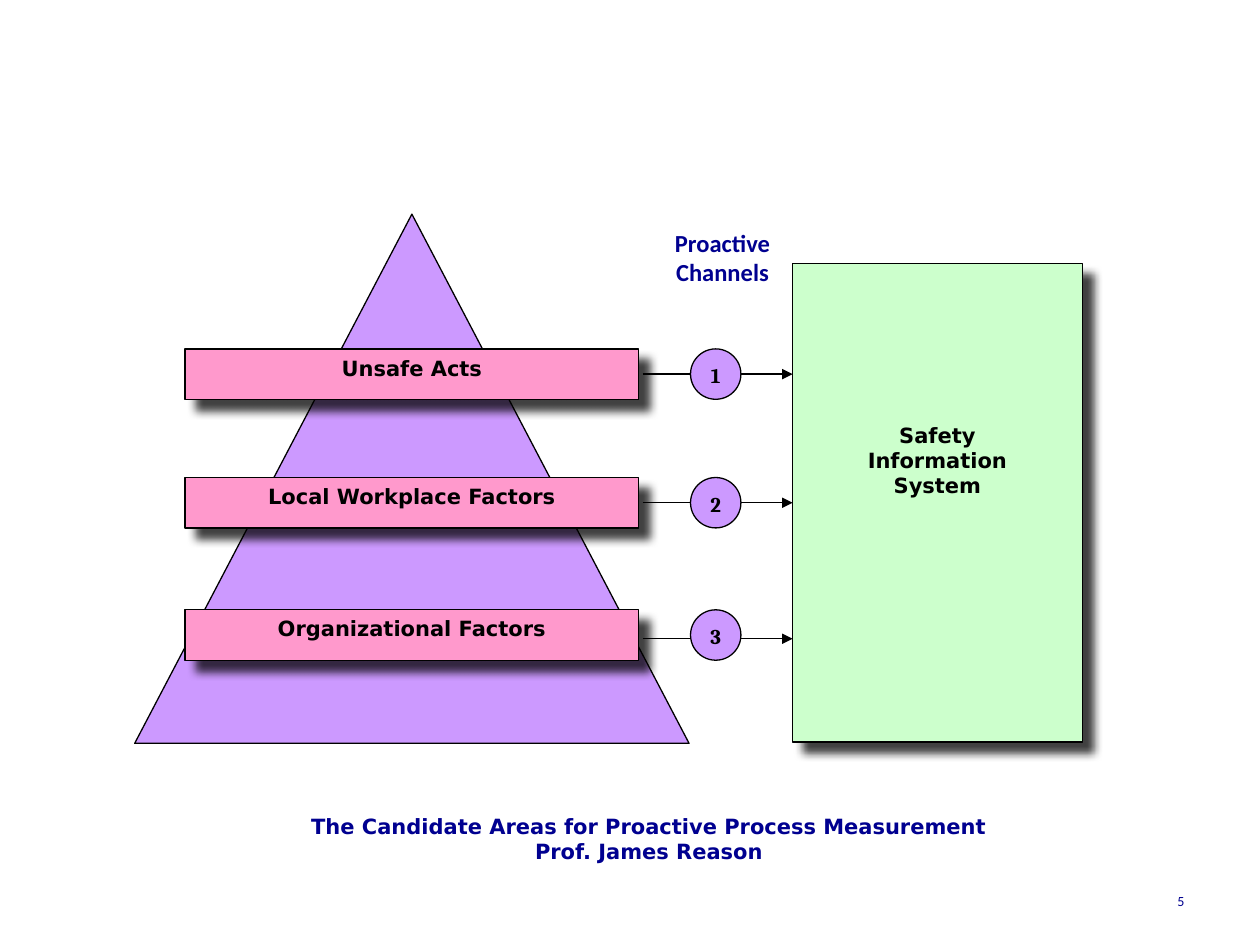
from pptx import Presentation
from pptx.dml.color import RGBColor
from pptx.enum.shapes import MSO_CONNECTOR, MSO_SHAPE
from pptx.enum.text import MSO_ANCHOR, PP_ALIGN
from pptx.oxml import parse_xml
from pptx.oxml.ns import nsdecls, qn
from pptx.util import Pt
from lxml import etree

BLACK = RGBColor(0x00, 0x00, 0x00)
NAVY = RGBColor(0x00, 0x00, 0x90)
GREEN = RGBColor(0xCC, 0xFF, 0xCC)
PURPLE = RGBColor(0xCC, 0x99, 0xFF)
PINK = RGBColor(0xFF, 0x99, 0xCC)

SHADOW = (
    f'<a:effectLst {nsdecls("a")}>'
    '<a:outerShdw blurRad="63500" dist="107950" dir="2700000" algn="tl" rotWithShape="0">'
    '<a:srgbClr val="000000"><a:alpha val="75000"/></a:srgbClr>'
    '</a:outerShdw></a:effectLst>'
)

prs = Presentation()
prs.slide_width, prs.slide_height = Pt(720), Pt(540)
s = prs.slides.add_slide(prs.slide_layouts[6])


def add_box(kind, x, y, w, h, fill=None, lines=(), font="DejaVu Sans", size=12,
            color=BLACK, bold=True, align=PP_ALIGN.CENTER, shadow=False):
    """Add a filled shape, or a text box when kind is None."""
    if kind is None:
        sp = s.shapes.add_textbox(Pt(x), Pt(y), Pt(w), Pt(h))
    else:
        sp = s.shapes.add_shape(kind, Pt(x), Pt(y), Pt(w), Pt(h))
        sp.fill.solid()
        sp.fill.fore_color.rgb = fill
        sp.line.color.rgb = BLACK
        sp.line.width = Pt(0.75)
        if shadow:
            sp._element.spPr.append(parse_xml(SHADOW))
        else:
            sp.shadow.inherit = False
    tf = sp.text_frame
    tf.word_wrap = True
    tf.vertical_anchor = MSO_ANCHOR.TOP
    for i, line in enumerate(lines):
        p = tf.paragraphs[0] if i == 0 else tf.add_paragraph()
        p.text = line
        p.alignment = align
        p.font.name, p.font.size, p.font.bold = font, Pt(size), bold
        p.font.color.rgb = color
    return sp


def add_line(x1, x2, y, arrow=False):
    c = s.shapes.add_connector(MSO_CONNECTOR.STRAIGHT, Pt(x1), Pt(y), Pt(x2), Pt(y))
    c.line.color.rgb = BLACK
    c.line.width = Pt(0.75)
    if arrow:
        etree.SubElement(c.line._get_or_add_ln(), qn("a:tailEnd"), type="triangle")
    etree.SubElement(c._element.spPr, qn("a:effectLst"))
    return c


# Safety information system
SYSTEM_X, SYSTEM_Y, SYSTEM_H = 452.9, 150.5, 273.6
system = add_box(MSO_SHAPE.RECTANGLE, SYSTEM_X, SYSTEM_Y, 165.6, SYSTEM_H, GREEN,
                 ["Safety", "Information", "System"], shadow=True)
system.text_frame.margin_top = Pt(91)

# Pyramid
add_box(MSO_SHAPE.ISOSCELES_TRIANGLE, 77, 122.4, 316.8, 302.4, PURPLE)

# Levels, each with its numbered channel into the system
BAR_X, BAR_W, SIZE, CIRCLE_X = 105.8, 259.2, 28.8, 394.6
levels = [("Unsafe Acts", 199.4, 213.8),
          ("Local Workplace Factors", 272.9, 287.3),
          ("Organizational Factors", 348.5, 365)]
for number, (name, top, line_y) in enumerate(levels, 1):
    add_box(MSO_SHAPE.RECTANGLE, BAR_X, top, BAR_W, SIZE, PINK, [name], shadow=True)
    add_box(MSO_SHAPE.OVAL, CIRCLE_X, top, SIZE, SIZE, PURPLE, [str(number)], font="Cambria")
    add_line(BAR_X + BAR_W + 2.2, CIRCLE_X, line_y)
    arrow = add_line(CIRCLE_X + SIZE, SYSTEM_X, line_y, arrow=True)
    if number == 2:  # the middle channel meets the middle of the system's side
        arrow.end_connect(system, 1)

# Channel heading, caption and slide number
add_box(None, 360, 126.7, 105.8, 41, lines=["Proactive", "Channels"],
        font="Calibri", size=14, color=NAVY)
add_box(None, 123.1, 461.5, 495.4, 36, color=NAVY,
        lines=["The Candidate Areas for Proactive Process Measurement", "Prof. James Reason"])
page = add_box(None, 516.2, 500.4, 167.8, 28.8, lines=["5"], font="Calibri", size=8,
               color=NAVY, bold=False, align=PP_ALIGN.RIGHT)
page.text_frame.vertical_anchor = MSO_ANCHOR.MIDDLE

prs.save("out.pptx")
